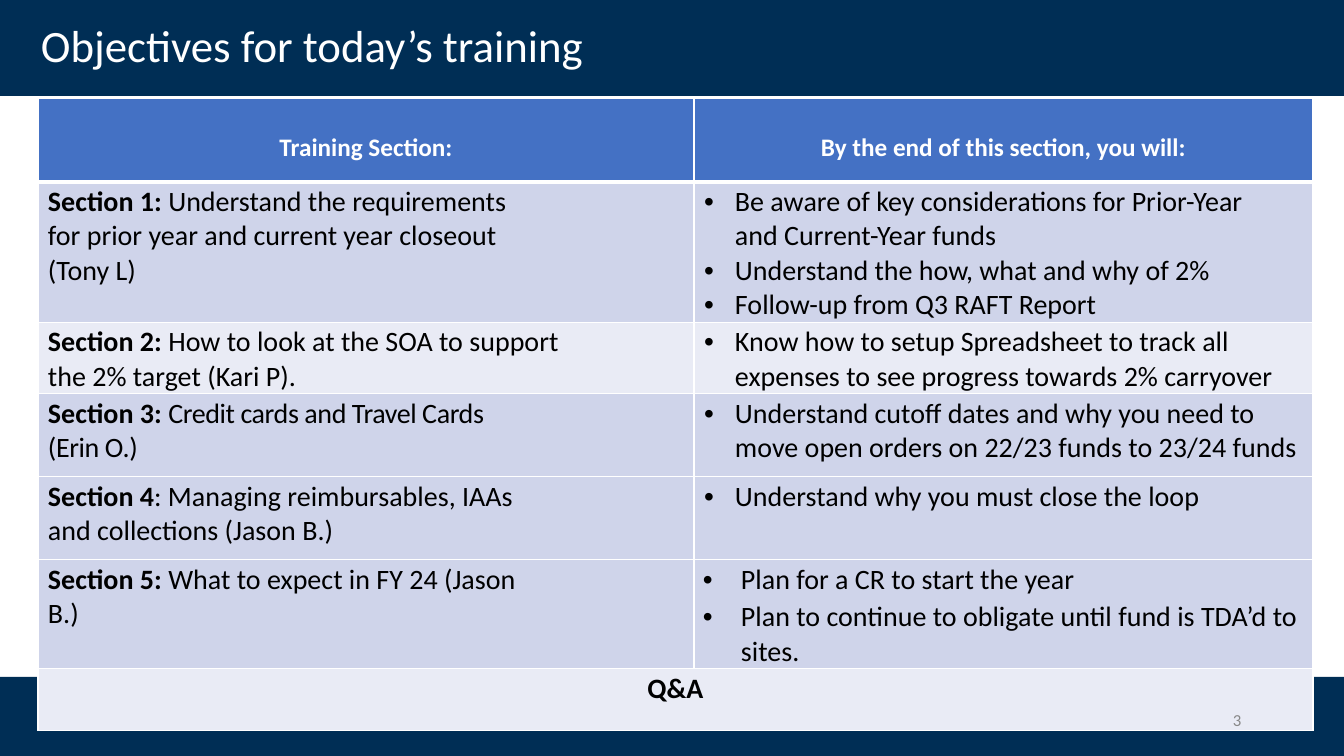
import pptx
import pptx.util
import pptx.dml.color
import pptx.enum.shapes
import pptx.enum.text
import pptx.oxml
import pptx.oxml.ns

ALIGN = pptx.enum.text.PP_ALIGN
NAVY, BLUE, LILAC, PALE = "002E55", "4471C4", "CFD4EA", "E9EBF5"
WHITE, BLACK, GRAY = "FFFFFF", "000000", "888888"

COLS = [656, 619]
ROWS = [84, 138, 70, 83, 83, 108, 62]
HEADS = ["Training Section:", "By the end of this section, you will:"]

# label, topic, letter spacing, right margins, bullet indent and hang, gap, bullets, fill
PARTS = [
    ("Section 1: ", "Understand the requirements for prior year and current year closeout (Tony L)",
     0, (164, 45), (41, 31), 0,
     ["Be aware of key considerations for Prior-Year and Current-Year funds",
      "Understand the how, what and why of 2%",
      "Follow-up from Q3 RAFT Report"], LILAC),
    ("Section 2: ", "How to look at the SOA to support the 2% target (Kari P).",
     0, (119, 10), (41, 31), 0,
     ["Know how to setup Spreadsheet to track all expenses to see progress towards 2% carryover"], PALE),
    ("Section 3: ", "Credit cards and Travel Cards (Erin O.)",
     -0.3, (164, 10), (41, 31), 0,
     ["Understand cutoff dates and why you need to move open orders on 22/23 funds to 23/24 funds"], LILAC),
    ("Section 4", ": Managing reimbursables, IAAs and collections (Jason B.)",
     0, (164, 10), (41, 31), 0,
     ["Understand why you must close the loop"], LILAC),
    ("Section 5: ", "What to expect in FY 24 (Jason B.)",
     0, (164, 10), (47, 38), 2.3,
     ["Plan for a CR to start the year",
      "Plan to continue to obligate until fund is TDA’d to sites."], LILAC),
]


def px(n):
    return pptx.util.Emu(round(n * 914400 / 100.8))


def color(code):
    return pptx.dml.color.RGBColor.from_string(code)


def add_run(para, text, size, code, bold=False, space=0):
    run = para.add_run()
    run.text = text
    font = run.font
    font.name = "Calibri"
    font.size = pptx.util.Pt(size)
    font.bold = bold
    font.color.rgb = color(code)
    if space:
        run._r.get_or_add_rPr().set("spc", str(round(space * 100)))


def set_pad(item, left, top, right):
    item.margin_left, item.margin_top = px(left), px(top)
    item.margin_right, item.margin_bottom = px(right), 0


def add_band(slide, top, height):
    """Draw a full-width band behind everything else."""
    band = slide.shapes.add_shape(pptx.enum.shapes.MSO_SHAPE.RECTANGLE,
                                  0, px(top), px(1344), px(height))
    band.shadow.inherit = False
    band.fill.solid()
    band.fill.fore_color.rgb = color(NAVY)
    band.line.fill.background()
    slide.shapes._spTree.insert(2, band.element)


def add_title(slide, left, top, width, height):
    title = slide.shapes.title
    title.left, title.top, title.width, title.height = map(px, (left, top, width, height))
    frame = title.text_frame
    frame.word_wrap = True
    frame.auto_size = pptx.enum.text.MSO_AUTO_SIZE.NONE
    frame.vertical_anchor = pptx.enum.text.MSO_ANCHOR.TOP
    set_pad(frame, 25, 1, 0)
    para = frame.paragraphs[0]
    para.alignment = ALIGN.LEFT
    add_run(para, "Objectives for today’s training", 32, WHITE)


def add_page(slide, left, top, width, height):
    box = slide.shapes.add_textbox(*map(px, (left, top, width, height)))
    frame = box.text_frame
    frame.word_wrap = False
    set_pad(frame, 1, 1, 0)
    add_run(frame.paragraphs[0], "3", 12, GRAY)


def add_edges(cell, top, bottom):
    """Give the cell white borders, with top and bottom widths in points."""
    props = cell._tc.get_or_add_tcPr()
    sides = [("lnL", 1), ("lnR", 1), ("lnT", top), ("lnB", bottom)]
    for spot, (name, width) in enumerate(sides):
        props.insert(spot, pptx.oxml.parse_xml(
            f'<a:{name} {pptx.oxml.ns.nsdecls("a")} w="{width * 12700}">'
            f'<a:solidFill><a:srgbClr val="{WHITE}"/></a:solidFill></a:{name}>'))


def set_cell(cell, fill, pad, top=1, bottom=1):
    cell.fill.solid()
    cell.fill.fore_color.rgb = color(fill)
    set_pad(cell, *pad)
    add_edges(cell, top, bottom)
    return cell.text_frame


def add_list(frame, items, indent, hang, gap):
    for num, item in enumerate(items):
        para = frame.add_paragraph() if num else frame.paragraphs[0]
        props = para._p.get_or_add_pPr()
        props.set("marL", str(px(indent)))
        props.set("indent", str(-px(hang)))
        for tag in ('buFont typeface="Arial"', 'buChar char="•"'):
            props.append(pptx.oxml.parse_xml(f'<a:{tag} {pptx.oxml.ns.nsdecls("a")}/>'))
        if num:
            para.space_before = pptx.util.Pt(gap)
        add_run(para, item, 20, BLACK)


def add_grid(slide, left, top):
    shape = slide.shapes.add_table(len(ROWS), len(COLS), px(left), px(top),
                                   px(sum(COLS)), px(sum(ROWS)))
    table = shape.table
    table.first_row = table.horz_banding = False
    for col, width in zip(table.columns, COLS):
        col.width = px(width)
    for row, height in zip(table.rows, ROWS):
        row.height = px(height)

    for col, head in enumerate(HEADS):
        para = set_cell(table.cell(0, col), BLUE, (0, 35, 0), bottom=3).paragraphs[0]
        para.alignment = ALIGN.CENTER
        add_run(para, head, 18, WHITE, True)

    for row, part in enumerate(PARTS, 1):
        label, topic, space, rights, hang, gap, items, fill = part
        edge = 3 if row == 1 else 1
        para = set_cell(table.cell(row, 0), fill, (10, 3, rights[0]), edge).paragraphs[0]
        add_run(para, label, 20, BLACK, True)
        add_run(para, topic, 20, BLACK, space=space)
        frame = set_cell(table.cell(row, 1), fill, (0, 3, rights[1]), edge)
        add_list(frame, items, *hang, gap)

    last = table.cell(len(ROWS) - 1, 0)
    last.merge(table.cell(len(ROWS) - 1, 1))
    para = set_cell(last, PALE, (0, 3, 0)).paragraphs[0]
    para.alignment = ALIGN.CENTER
    add_run(para, "Q&A", 20, BLACK, True)


def main():
    deck = pptx.Presentation()
    deck.slide_width, deck.slide_height = px(1344), px(756)
    slide = deck.slides.add_slide(deck.slide_layouts[5])
    add_band(slide, 0, 96)
    add_band(slide, 677, 79)
    add_title(slide, 16, 17, 1282, 55)
    add_grid(slide, 38, 98)
    add_page(slide, 1232, 709, 11, 23)
    deck.save("out.pptx")


if __name__ == "__main__":
    main()
